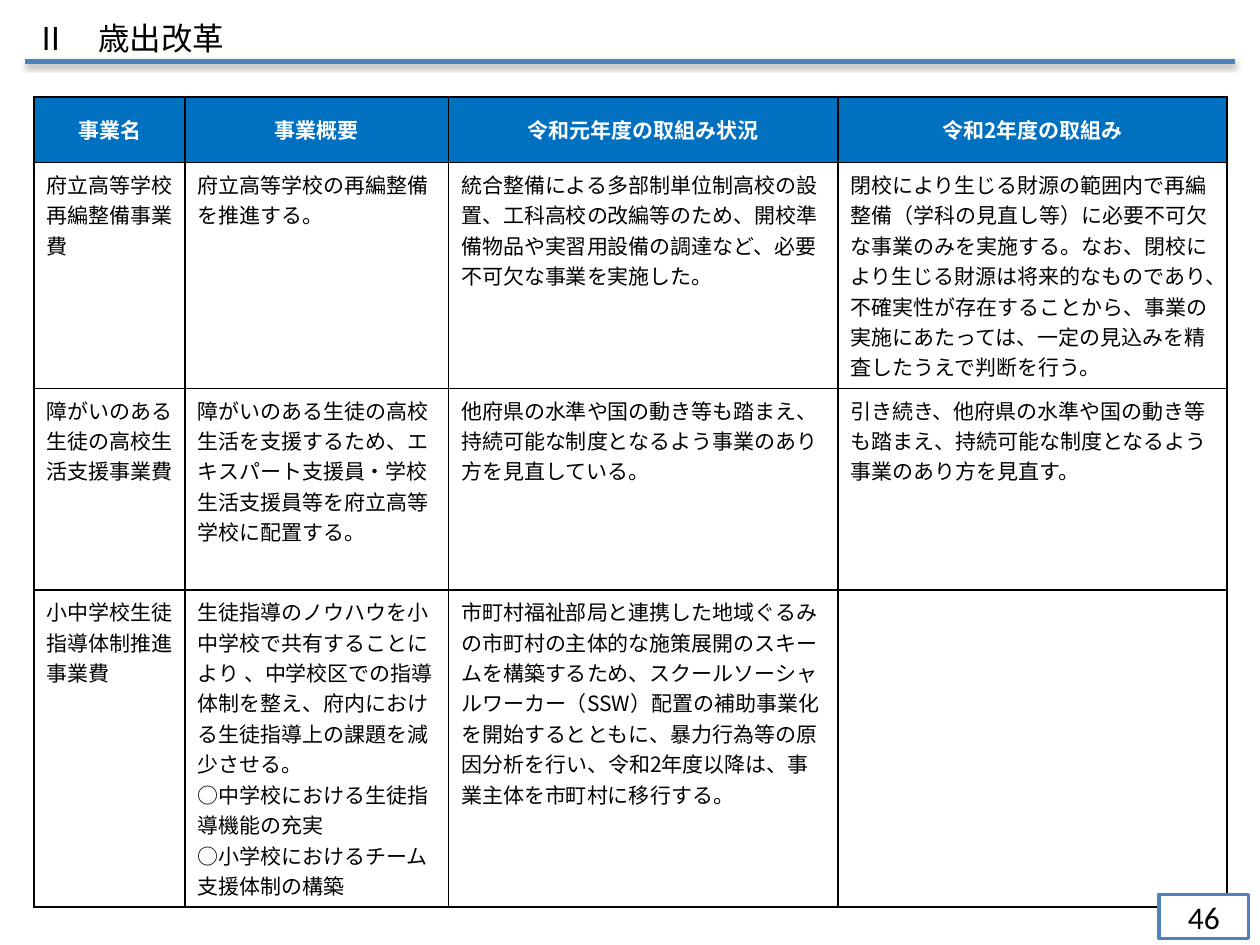
from dataclasses import dataclass

from lxml import etree
from pptx import Presentation
from pptx.dml.color import RGBColor
from pptx.enum.shapes import MSO_CONNECTOR, MSO_SHAPE
from pptx.enum.text import MSO_ANCHOR, MSO_AUTO_SIZE, PP_ALIGN
from pptx.oxml.ns import qn
from pptx.util import Emu, Pt

PX = 9144
TITLE_ONLY = 5
RECTANGLE = MSO_SHAPE.RECTANGLE
STRAIGHT = MSO_CONNECTOR.STRAIGHT
TOP, MIDDLE = MSO_ANCHOR.TOP, MSO_ANCHOR.MIDDLE
LEFT, CENTER = PP_ALIGN.LEFT, PP_ALIGN.CENTER
NO_AUTOFIT = MSO_AUTO_SIZE.NONE

JAPANESE, LATIN = "Noto Sans CJK JP", "Calibri"
BLACK, WHITE, HEADER_BLUE, ACCENT = "000000", "FFFFFF", "0070C0", "4F81BD"

COLUMN_WIDTHS = [120, 209, 309, 309]
HEADER_HEIGHT = 52
HEADINGS = ["事業名", "事業概要", "令和元年度の取組み状況", "令和2年度の取組み"]


@dataclass(frozen=True)
class Box:
    left: int
    top: int
    width: int
    height: int

    def emu(self) -> list[Emu]:
        return [px(n) for n in (self.left, self.top, self.width, self.height)]


@dataclass(frozen=True)
class Project:
    height: int
    name: str
    outline: str
    last_year: str
    this_year: str = ""

    def texts(self) -> list[str]:
        return [self.name, self.outline, self.last_year, self.this_year]


@dataclass(frozen=True)
class TextStyle:
    size: int
    color: str = BLACK
    bold: bool = False
    align: PP_ALIGN = LEFT
    font: str = JAPANESE


HEADING_STYLE = TextStyle(12, WHITE, True, CENTER)
BODY_STYLE = TextStyle(12)

PROJECTS = [
    Project(
        173,
        "府立高等学校再編整備事業費",
        "府立高等学校の再編整備を推進する。",
        "統合整備による多部制単位制高校の設置、工科高校の改編等のため、開校準備物品や"
        "実習用設備の調達など、必要不可欠な事業を実施した。",
        "閉校により生じる財源の範囲内で再編整備（学科の⾒直し等）に必要不可⽋な事業のみを"
        "実施する。なお、閉校により生じる財源は将来的なものであり、不確実性が存在することから、"
        "事業の実施にあたっては、⼀定の⾒込みを精査したうえで判断を⾏う。",
    ),
    Project(
        160,
        "障がいのある生徒の高校生活支援事業費",
        "障がいのある生徒の高校生活を支援するため、エキスパート支援員・学校生活支援員等を"
        "府立高等学校に配置する。",
        "他府県の水準や国の動き等も踏まえ、持続可能な制度となるよう事業のあり方を見直している。",
        "引き続き、他府県の水準や国の動き等も踏まえ、持続可能な制度となるよう事業のあり方を見直す。",
    ),
    Project(
        220,
        "小中学校生徒指導体制推進事業費",
        "生徒指導のノウハウを小中学校で共有することにより 、中学校区での指導体制を整え、"
        "府内における生徒指導上の課題を減少させる。\n"
        "○中学校における生徒指導機能の充実\n"
        "○小学校におけるチーム支援体制の構築",
        "市町村福祉部局と連携した地域ぐるみの市町村の主体的な施策展開のスキームを構築するため、"
        "スクールソーシャルワーカー（SSW）配置の補助事業化を開始するとともに、"
        "暴力行為等の原因分析を行い、令和2年度以降は、事業主体を市町村に移行する。",
    ),
]


def px(length: int) -> Emu:
    return Emu(length * PX)


def rgb(color: str) -> RGBColor:
    return RGBColor.from_string(color)


def write(frame, text: str, style: TextStyle) -> None:
    frame.text = text
    for paragraph in frame.paragraphs:
        paragraph.alignment = style.align
        font = paragraph.font
        font.name = style.font
        font.size = Pt(style.size)
        font.bold = style.bold
        font.color.rgb = rgb(style.color)
        latin = font._element.find(qn("a:latin"))
        east_asian = etree.Element(qn("a:ea"), typeface=style.font)
        latin.addnext(east_asian)


def add_borders(cell) -> None:
    properties = cell._tc.get_or_add_tcPr()
    for side in ("a:lnL", "a:lnR", "a:lnT", "a:lnB"):
        border = etree.SubElement(properties, qn(side), w=str(Pt(1)))
        fill = etree.SubElement(border, qn("a:solidFill"))
        etree.SubElement(fill, qn("a:srgbClr"), val=BLACK)


def add_title(slide, text: str, box: Box) -> None:
    title = slide.shapes.title
    title.left, title.top, title.width, title.height = box.emu()
    frame = title.text_frame
    frame.auto_size = NO_AUTOFIT
    frame.vertical_anchor = TOP
    frame.word_wrap = True
    write(frame, text, TextStyle(18))


def add_rule(slide, left: int, right: int, y: int) -> None:
    rule = slide.shapes.add_connector(STRAIGHT, px(left), px(y), px(right), px(y))
    rule.line.color.rgb = rgb(ACCENT)
    rule.line.width = Pt(3)
    effects = etree.SubElement(rule._element.spPr, qn("a:effectLst"))
    shadow = etree.SubElement(
        effects, qn("a:outerShdw"), blurRad=str(Pt(3.1)), dist=str(Pt(1.8)),
        dir="5400000", rotWithShape="0",
    )
    tint = etree.SubElement(shadow, qn("a:srgbClr"), val=BLACK)
    etree.SubElement(tint, qn("a:alpha"), val="35000")


def add_project_table(slide, projects: list[Project], left: int, top: int) -> None:
    heights = [HEADER_HEIGHT] + [project.height for project in projects]
    box = Box(left, top, sum(COLUMN_WIDTHS), sum(heights))
    table = slide.shapes.add_table(len(heights), len(COLUMN_WIDTHS), *box.emu()).table
    table.first_row = table.horz_banding = False
    for column, width in zip(table.columns, COLUMN_WIDTHS):
        column.width = px(width)
    for row, height in zip(table.rows, heights):
        row.height = px(height)
    contents = [HEADINGS] + [project.texts() for project in projects]
    for row_index, texts in enumerate(contents):
        is_header = row_index == 0
        for column_index, text in enumerate(texts):
            cell = table.cell(row_index, column_index)
            add_borders(cell)
            if is_header:
                cell.fill.solid()
                cell.fill.fore_color.rgb = rgb(HEADER_BLUE)
            else:
                cell.fill.background()
            cell.vertical_anchor = MIDDLE if is_header else TOP
            write(cell.text_frame, text, HEADING_STYLE if is_header else BODY_STYLE)


def add_page_number(slide, number: str, box: Box) -> None:
    page = slide.shapes.add_shape(RECTANGLE, *box.emu())
    page.shadow.inherit = False
    page.fill.solid()
    page.fill.fore_color.rgb = rgb(WHITE)
    page.line.color.rgb = rgb(ACCENT)
    page.line.width = Pt(2)
    page.text_frame.vertical_anchor = MIDDLE
    write(page.text_frame, number, TextStyle(18, align=CENTER, font=LATIN))


def main() -> None:
    deck = Presentation()
    deck.slide_width, deck.slide_height = px(1000), px(750)
    slide = deck.slides.add_slide(deck.slide_layouts[TITLE_ONLY])
    add_project_table(slide, PROJECTS, 27, 77)
    add_title(slide, "Ⅱ　歳出改革", Box(18, 10, 890, 40))
    add_rule(slide, 20, 980, 49)
    add_page_number(slide, "46", Box(920, 710, 71, 35))
    deck.save("out.pptx")


if __name__ == "__main__":
    main()
